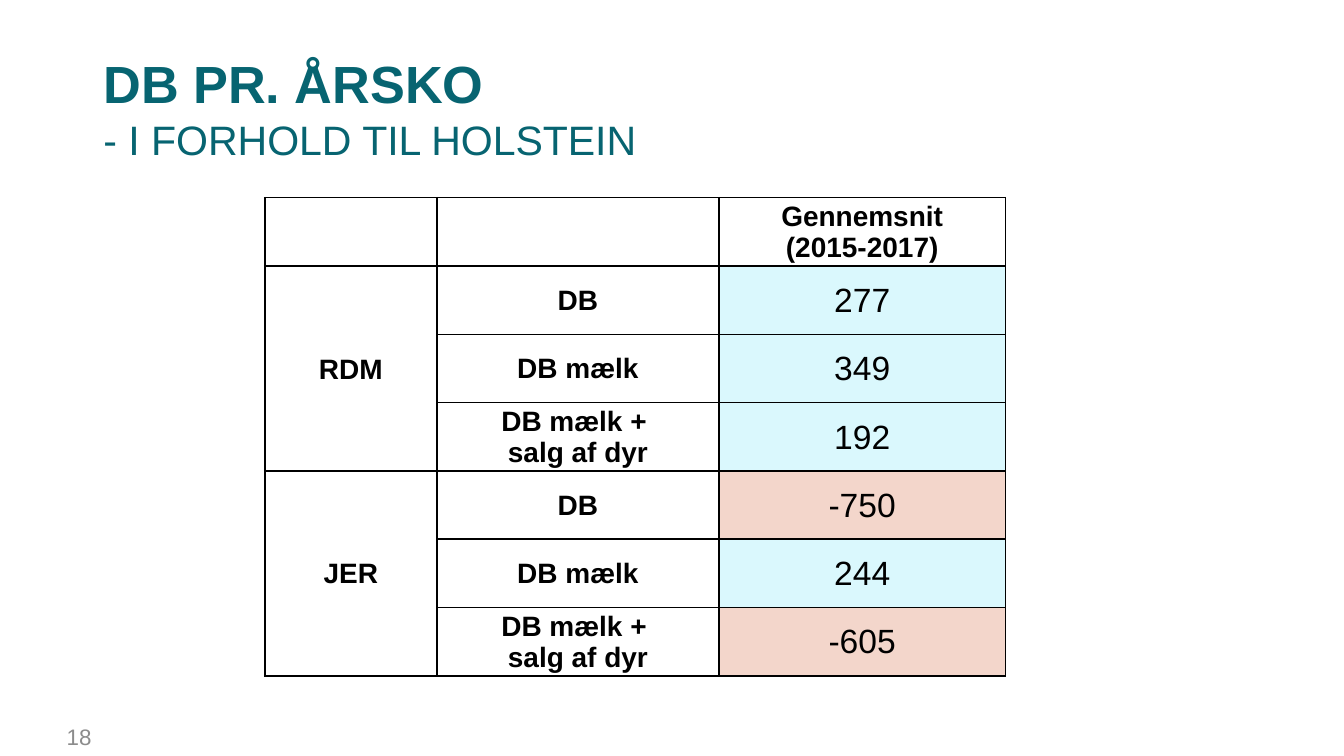
"""Build the slide comparing gross margin per cow with Holstein."""
from lxml.etree import SubElement
from pptx import Presentation
from pptx.dml.color import RGBColor
from pptx.enum.text import MSO_ANCHOR as Anchor, PP_ALIGN as Align
from pptx.oxml.ns import qn
from pptx.util import Inches, Pt

TEAL, GREY, BLACK = "076471", "8C8C8C", "000000"
GAIN, LOSS = "DAF8FD", "F3D6CB"
MEASURES = ["DB", "DB mælk", "DB mælk + \vsalg af dyr"]
BREEDS = {"RDM": [277, 349, 192], "JER": [-750, 244, -605]}


def color(value):
    return RGBColor.from_string(value)


class MarginSlide:
    font_name = "Arial"

    def __init__(self, deck):
        self.slide = deck.slides.add_slide(deck.slide_layouts[5])

    def style(self, font, size, tone, bold=False):
        font.name, font.size, font.bold = self.font_name, Pt(size), bold
        font.color.rgb = color(tone)

    def place(self, box, left, top, width, height):
        box.left, box.top = Inches(left), Inches(top)
        box.width, box.height = Inches(width), Inches(height)

    def title(self, heading, subheading):
        title = self.slide.shapes.title
        self.place(title, 0.67, 0.33, 8.83, 0.94)
        title.text_frame.vertical_anchor = Anchor.MIDDLE
        paragraph = title.text_frame.paragraphs[0]
        paragraph.alignment = Align.LEFT
        first = paragraph.add_run()
        first.text = heading
        self.style(first.font, 28, TEAL, True)
        paragraph.add_line_break()
        second = paragraph.add_run()
        second.text = subheading
        self.style(second.font, 22, TEAL)

    def page_number(self, number):
        box = self.slide.shapes.add_textbox(Inches(0), Inches(5.32), Inches(0.78), Inches(0.3))
        frame = box.text_frame
        frame.word_wrap = True
        frame.margin_top = Inches(0.06)
        paragraph = frame.paragraphs[0]
        paragraph.text = number
        paragraph.alignment = Align.RIGHT
        self.style(paragraph.font, 12, GREY)

    def border(self, cell):
        properties = cell._tc.get_or_add_tcPr()
        for side in ("lnL", "lnR", "lnT", "lnB"):
            line = SubElement(properties, qn(f"a:{side}"), w=str(Pt(1)))
            fill = SubElement(line, qn("a:solidFill"))
            SubElement(fill, qn("a:srgbClr"), val=BLACK)

    def cell(self, cell, text, size=15, bold=True):
        cell.text = text
        cell.vertical_anchor = Anchor.MIDDLE
        cell.margin_left = cell.margin_right = cell.margin_top = Inches(0.01)
        cell.margin_bottom = 0
        paragraph = cell.text_frame.paragraphs[0]
        paragraph.alignment = Align.CENTER
        self.style(paragraph.font, size, BLACK, bold)

    def table(self, header, measures, breeds):
        rows = 1 + len(measures) * len(breeds)
        frame = self.slide.shapes.add_table(
            rows, 3, Inches(1.97), Inches(1.47), Inches(5.51), Inches(3.55))
        table = frame.table
        table.first_row = table.horz_banding = False
        for column, width in zip(table.columns, (1.28, 2.1, 2.13)):
            column.width = Inches(width)
        for cell in table.iter_cells():
            self.border(cell)
            cell.fill.background()
        self.cell(table.cell(0, 2), header)
        for index, (breed, margins) in enumerate(breeds.items()):
            top = 1 + index * len(measures)
            table.cell(top, 0).merge(table.cell(top + len(measures) - 1, 0))
            self.cell(table.cell(top, 0), breed)
            for row, (measure, margin) in enumerate(zip(measures, margins), top):
                self.cell(table.cell(row, 1), measure)
                result = table.cell(row, 2)
                self.cell(result, str(margin), 18, False)
                result.fill.solid()
                result.fill.fore_color.rgb = color(GAIN if margin > 0 else LOSS)


def main():
    deck = Presentation()
    deck.slide_width = Inches(10)
    deck.slide_height = deck.slide_width * 9 // 16
    page = MarginSlide(deck)
    page.title("DB PR. ÅRSKO ", "- I FORHOLD TIL HOLSTEIN")
    page.page_number("18")
    page.table("Gennemsnit\v(2015-2017)", MEASURES, BREEDS)
    deck.save("out.pptx")


if __name__ == "__main__":
    main()
